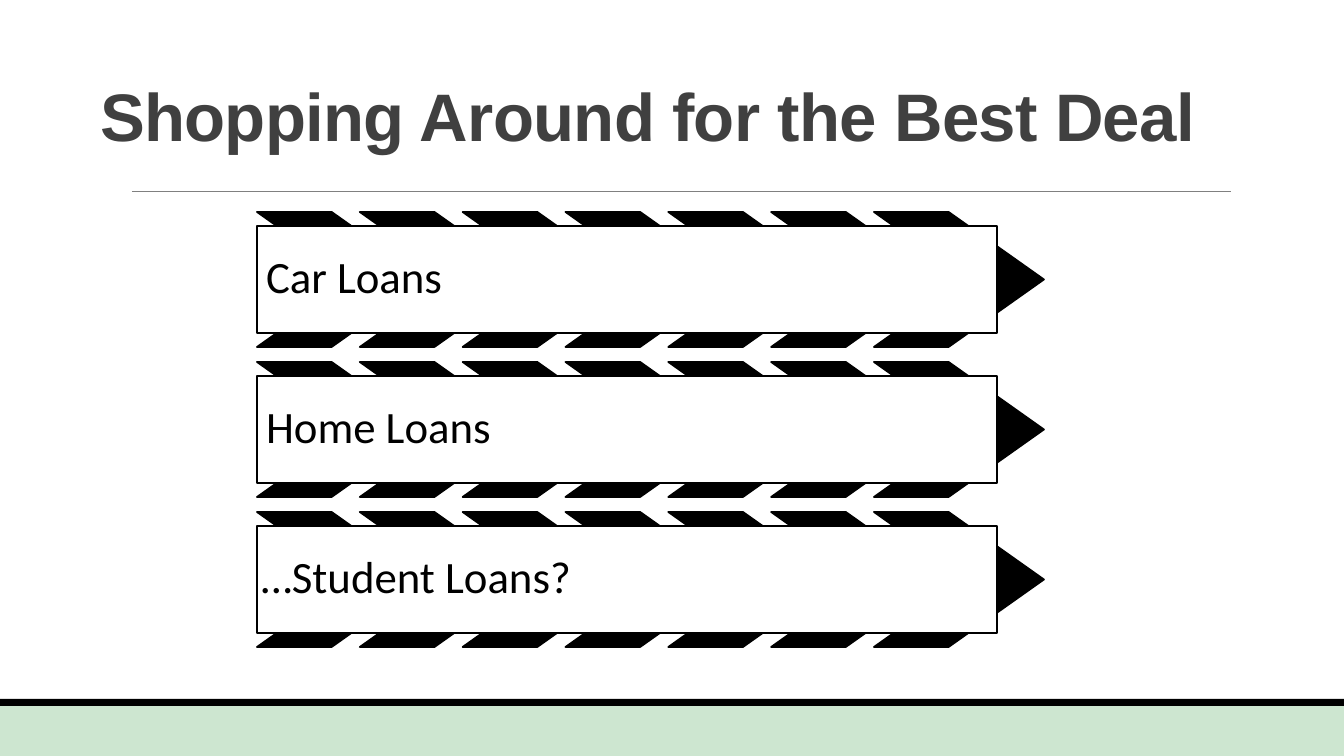
from lxml.etree import SubElement
from pptx import Presentation
from pptx.dml.color import RGBColor
from pptx.enum.shapes import MSO_CONNECTOR, MSO_SHAPE
from pptx.enum.text import MSO_ANCHOR, PP_ALIGN
from pptx.oxml.ns import qn
from pptx.util import Pt

PX = 914400 / 100.8
COLORS = {"mint": "CDE6D0", "black": "000000", "white": "FFFFFF",
          "rule": "808080", "title": "404040"}
TITLE_FONT = {"name": "Arial", "size": Pt(48), "bold": True}
LOAN_FONT = {"name": "Calibri", "size": Pt(32)}
LOANS = [("Car Loans", 9), ("Home Loans", 9), ("…Student Loans?", 4)]
CHEVRONS = 7


def px(n):
    """Turn pixels into EMU."""
    return round(n * PX)


def rgb(name):
    """Look up a named colour."""
    return RGBColor.from_string(COLORS[name])


def add_box(slide, kind, box, fill, line=None):
    """Add a flat preset shape."""
    sp = slide.shapes.add_shape(kind, *map(px, box))
    sp.shadow.inherit = False
    sp.fill.solid()
    sp.fill.fore_color.rgb = rgb(fill)
    if line:
        sp.line.color.rgb = rgb(line)
        sp.line.width = Pt(1.25)
    else:
        sp.line.fill.background()
    return sp


def write(sp, text, font, color, align, anchor, spacing):
    """Write one formatted line into a shape and return its run."""
    tf = sp.text_frame
    tf.word_wrap = True
    tf.vertical_anchor = anchor
    p = tf.paragraphs[0]
    p.alignment = align
    p.line_spacing = spacing
    r = p.add_run()
    r.text = text
    for key, value in font.items():
        setattr(r.font, key, value)
    r.font.color.rgb = rgb(color)
    return r


def add_footer(slide, x, y, w, h):
    """Draw the mint footer with its black top edge."""
    edge = 7
    add_box(slide, MSO_SHAPE.RECTANGLE, (x, y + edge, w, h - edge), "mint")
    add_box(slide, MSO_SHAPE.RECTANGLE, (x, y, w, edge), "black")


def add_title(slide, x, y, w, h):
    """Place the title and the thin rule below it."""
    left, right, top = x + 70, x + w - 2, y + h + 31
    line = slide.shapes.add_connector(
        MSO_CONNECTOR.STRAIGHT, px(left), px(top), px(right), px(top))
    line.line.color.rgb = rgb("rule")
    line.line.width = Pt(0.5)
    SubElement(line._element.spPr, qn("a:effectLst"))
    sp = slide.shapes.add_textbox(px(x), px(y), px(w), px(h))
    r = write(sp, "Shopping Around for the Best Deal", TITLE_FONT, "title",
              PP_ALIGN.CENTER, MSO_ANCHOR.BOTTOM, 0.85)
    r.font._element.set("spc", "-50")


def add_loan(slide, x, y, w, h, text, inset):
    """Draw a row of chevrons behind a labelled white band."""
    chevron_w, band_w, margin = 170, 740, 14
    step = (w - chevron_w) / (CHEVRONS - 1)
    for i in range(CHEVRONS):
        sp = add_box(slide, MSO_SHAPE.CHEVRON,
                     (x + i * step, y, chevron_w, h), "black", "black")
        sp.adjustments[0] = 0.706
    band = add_box(slide, MSO_SHAPE.RECTANGLE,
                   (x, y + margin, band_w, h - 2 * margin), "white", "black")
    for side in ("left", "top", "right", "bottom"):
        setattr(band.text_frame, f"margin_{side}", px(inset))
    write(band, text, LOAN_FONT, "black", PP_ALIGN.LEFT, MSO_ANCHOR.MIDDLE, 0.9)


def main():
    """Build the slide and save it."""
    prs = Presentation()
    prs.slide_width, prs.slide_height = px(1344), px(756)
    slide = prs.slides.add_slide(prs.slide_layouts[6])
    add_footer(slide, 0, 699, 1344, 57)
    add_title(slide, 62, 0, 1171, 160)
    for i, (text, inset) in enumerate(LOANS):
        add_loan(slide, 257, 212 + i * 150, 787, 135, text, inset)
    prs.save("out.pptx")


if __name__ == "__main__":
    main()
